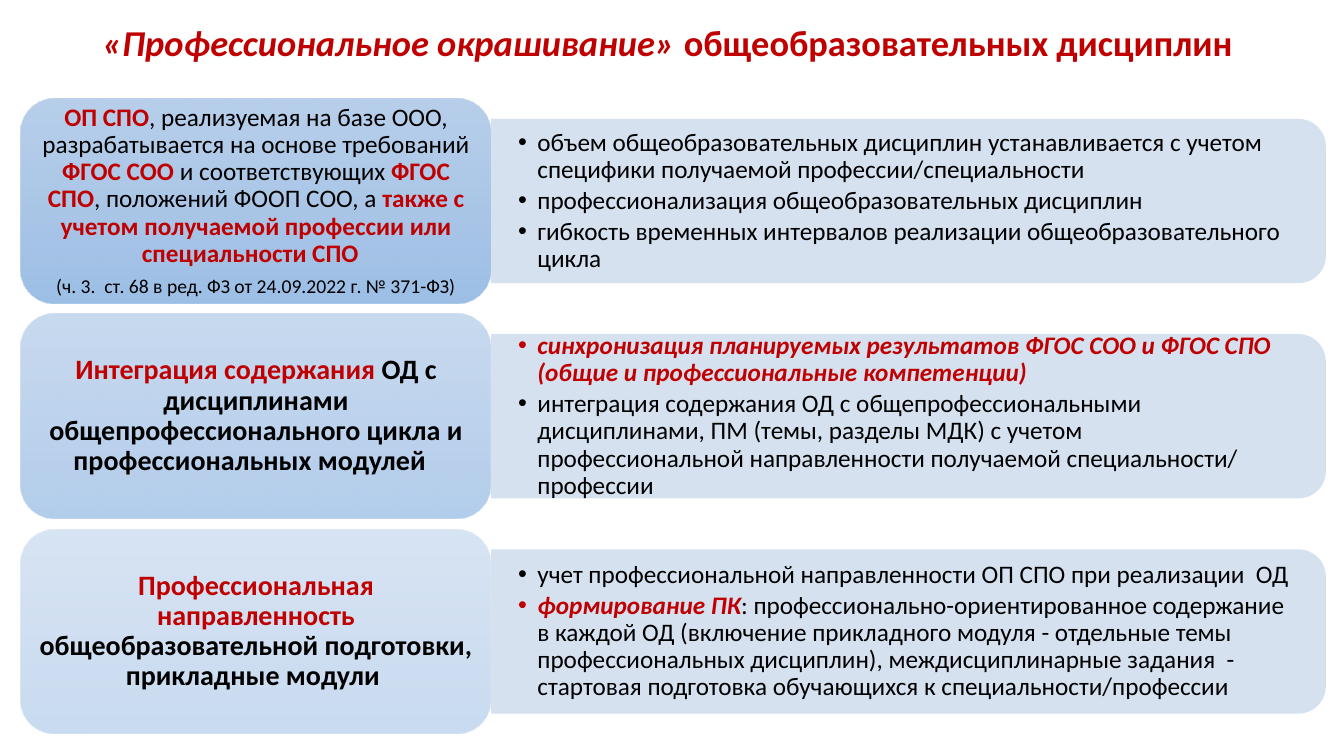
import lxml.etree
import pptx
import pptx.dml.color
import pptx.enum.shapes
import pptx.enum.text
import pptx.oxml.ns
import pptx.util

COLORS = {
    "accent": "C00000",
    "text": "000000",
    "panel": "D2DEEF",
    "card_top": "B1CBE9",
    "card_middle": "A3C1E5",
    "card_bottom": "93B9E4",
}
RUN_STYLES = {
    "plain": {"color": "text", "bold": False, "italic": False},
    "strong": {"color": "text", "bold": True, "italic": False},
    "accent": {"color": "accent", "bold": True, "italic": False},
    "slanted": {"color": "accent", "bold": True, "italic": True},
}
COLUMNS = [(0.21, 4.66), (4.87, 8.28)]
ROW_TOP, ROW_PITCH, CARD_HEIGHT, PANEL_HEIGHT = 0.98, 2.135, 2.03, 1.63
SHAPES = pptx.enum.shapes.MSO_SHAPE
ALIGN = pptx.enum.text.PP_ALIGN

TITLE = [("«Профессиональное окрашивание» ", "slanted"),
         ("общеобразовательных дисциплин", "accent")]
ROWS = [
    {
        "opacity": 90,
        "card": [
            (18, [
                ("ОП СПО", "accent"),
                (", реализуемая на базе ООО, разрабатывается на основе требований ", "plain"),
                ("ФГОС СОО ", "accent"),
                ("и соответствующих ", "plain"),
                ("ФГОС СПО", "accent"),
                (", положений ФООП СОО, а ", "plain"),
                ("также с учетом получаемой профессии или специальности СПО  ", "accent"),
            ]),
            (14, [(" (ч. 3.  ст. 68 в ред. ФЗ от 24.09.2022 г. № 371-ФЗ) ", "plain")]),
        ],
        "panel": [
            (18, [("объем общеобразовательных дисциплин устанавливается с учетом "
                   "специфики получаемой профессии/специальности", "plain")]),
            (18, [("профессионализация общеобразовательных дисциплин", "plain")]),
            (18, [("гибкость временных интервалов реализации "
                   "общеобразовательного цикла", "plain")]),
        ],
    },
    {
        "opacity": 70,
        "card": [
            (20, [
                ("Интеграция содержания", "accent"),
                (" ОД с дисциплинами общепрофессионального цикла и "
                 "профессиональных модулей  ", "strong"),
            ]),
        ],
        "panel": [
            (18, [("синхронизация планируемых результатов ФГОС СОО и ФГОС СПО "
                   "(общие и профессиональные компетенции)", "slanted")]),
            (18, [("интеграция содержания ОД с общепрофессиональными дисциплинами, "
                   "ПМ (темы, разделы МДК) с учетом профессиональной направленности "
                   "получаемой специальности/ профессии", "plain")]),
        ],
    },
    {
        "opacity": 50,
        "card": [
            (20, [
                ("Профессиональная направленность ", "accent"),
                ("общеобразовательной подготовки, прикладные модули ", "strong"),
            ]),
        ],
        "panel": [
            (18, [("учет профессиональной направленности ОП СПО при реализации  ОД",
                   "plain")]),
            (18, [
                ("формирование ПК", "slanted"),
                (": профессионально-ориентированное содержание в каждой ОД "
                 "(включение прикладного модуля - отдельные темы профессиональных "
                 "дисциплин), междисциплинарные задания  - стартовая подготовка "
                 "обучающихся к специальности/профессии", "plain"),
            ]),
        ],
    },
]


class SlideBuilder:
    """Holds the slide and its style and draws each kind of element."""

    def __init__(self, presentation):
        self.slide = presentation.slides.add_slide(presentation.slide_layouts[6])
        self.font = "Calibri"

    def element(self, parent, tag, **attributes):
        return lxml.etree.SubElement(parent, pptx.oxml.ns.qn(tag), attributes)

    def color_element(self, parent, color, opacity):
        color_node = self.element(parent, "a:srgbClr", val=COLORS[color])
        self.element(color_node, "a:alpha", val=str(opacity * 1000))

    def block(self, kind, left, top, width, height):
        shape = self.slide.shapes.add_shape(
            kind, *map(pptx.util.Inches, (left, top, width, height)))
        shape.shadow.inherit = False
        shape.line.fill.background()
        return shape

    def set_text(self, shape, paragraphs, margins, alignment, space=0, bullets=False):
        frame = shape.text_frame
        settings = {"word_wrap": True,
                    "vertical_anchor": pptx.enum.text.MSO_ANCHOR.MIDDLE}
        for side, margin in zip(("left", "right", "top", "bottom"),
                                (margins[0], margins[0], margins[1], margins[1])):
            settings["margin_" + side] = pptx.util.Inches(margin)
        for name, value in settings.items():
            setattr(frame, name, value)
        for index, (size, runs) in enumerate(paragraphs):
            paragraph = frame.add_paragraph() if index else frame.paragraphs[0]
            layout = {"alignment": alignment, "line_spacing": 0.9,
                      "space_after": pptx.util.Pt(size * space)}
            for name, value in layout.items():
                setattr(paragraph, name, value)
            if bullets:
                self.bullet(paragraph)
            for text, style in runs:
                self.add_text(paragraph, text, size, **RUN_STYLES[style])

    def add_text(self, paragraph, text, size, color, **emphasis):
        run = paragraph.add_run()
        run.text = text
        values = {"name": self.font, "size": pptx.util.Pt(size), **emphasis}
        for name, value in values.items():
            setattr(run.font, name, value)
        run.font.color.rgb = pptx.dml.color.RGBColor.from_string(COLORS[color])

    def bullet(self, paragraph):
        properties = paragraph._p.get_or_add_pPr()
        indent = pptx.util.Inches(0.19)
        properties.set("marL", str(indent))
        properties.set("indent", str(-indent))
        self.element(properties, "a:buFont", typeface="Arial")
        self.element(properties, "a:buChar", char="•")

    def title(self, runs):
        box = self.slide.shapes.add_textbox(
            *map(pptx.util.Inches, (0.92, 0.24, 11.5, 0.41)))
        self.set_text(box, [(26, runs)], (0.1, 0), ALIGN.LEFT)

    def panel(self, row, paragraphs):
        left, width = COLUMNS[1]
        middle = ROW_TOP + row * ROW_PITCH + CARD_HEIGHT / 2
        shape = self.block(SHAPES.ROUND_2_SAME_RECTANGLE,
                           left + (width - PANEL_HEIGHT) / 2, middle - width / 2,
                           PANEL_HEIGHT, width)
        shape.rotation = 90
        shape.fill.solid()
        shape.fill.fore_color.rgb = pptx.dml.color.RGBColor.from_string(COLORS["panel"])
        fill = shape._element.spPr.find(pptx.oxml.ns.qn("a:solidFill"))
        self.element(fill[0], "a:alpha", val="90000")
        box = self.slide.shapes.add_textbox(
            *map(pptx.util.Inches, (left, middle - 0.735, width - 0.08, 1.47)))
        self.set_text(box, paragraphs, (0.27, 0.14), ALIGN.LEFT, 0.15, True)

    def card(self, row, paragraphs, opacity):
        left, width = COLUMNS[0]
        shape = self.block(SHAPES.ROUNDED_RECTANGLE, left, ROW_TOP + row * ROW_PITCH,
                           width, CARD_HEIGHT)
        shape.fill.gradient()
        shape.fill.gradient_angle = 270
        fill = shape._element.spPr.find(pptx.oxml.ns.qn("a:gradFill"))
        stops = fill.find(pptx.oxml.ns.qn("a:gsLst"))
        for stop in list(stops):
            stops.remove(stop)
        for index, color in enumerate(("card_top", "card_middle", "card_bottom")):
            stop = self.element(stops, "a:gs", pos=str(index * 50000))
            self.color_element(stop, color, opacity)
        self.set_text(shape, paragraphs, (0.08, 0.04), ALIGN.CENTER, 0.35)


def main():
    presentation = pptx.Presentation()
    presentation.slide_width = pptx.util.Inches(13.33)
    presentation.slide_height = pptx.util.Inches(7.5)
    builder = SlideBuilder(presentation)
    builder.title(TITLE)
    for index, row in enumerate(ROWS):
        builder.panel(index, row["panel"])
        builder.card(index, row["card"], row["opacity"])
    presentation.save("out.pptx")


if __name__ == "__main__":
    main()
